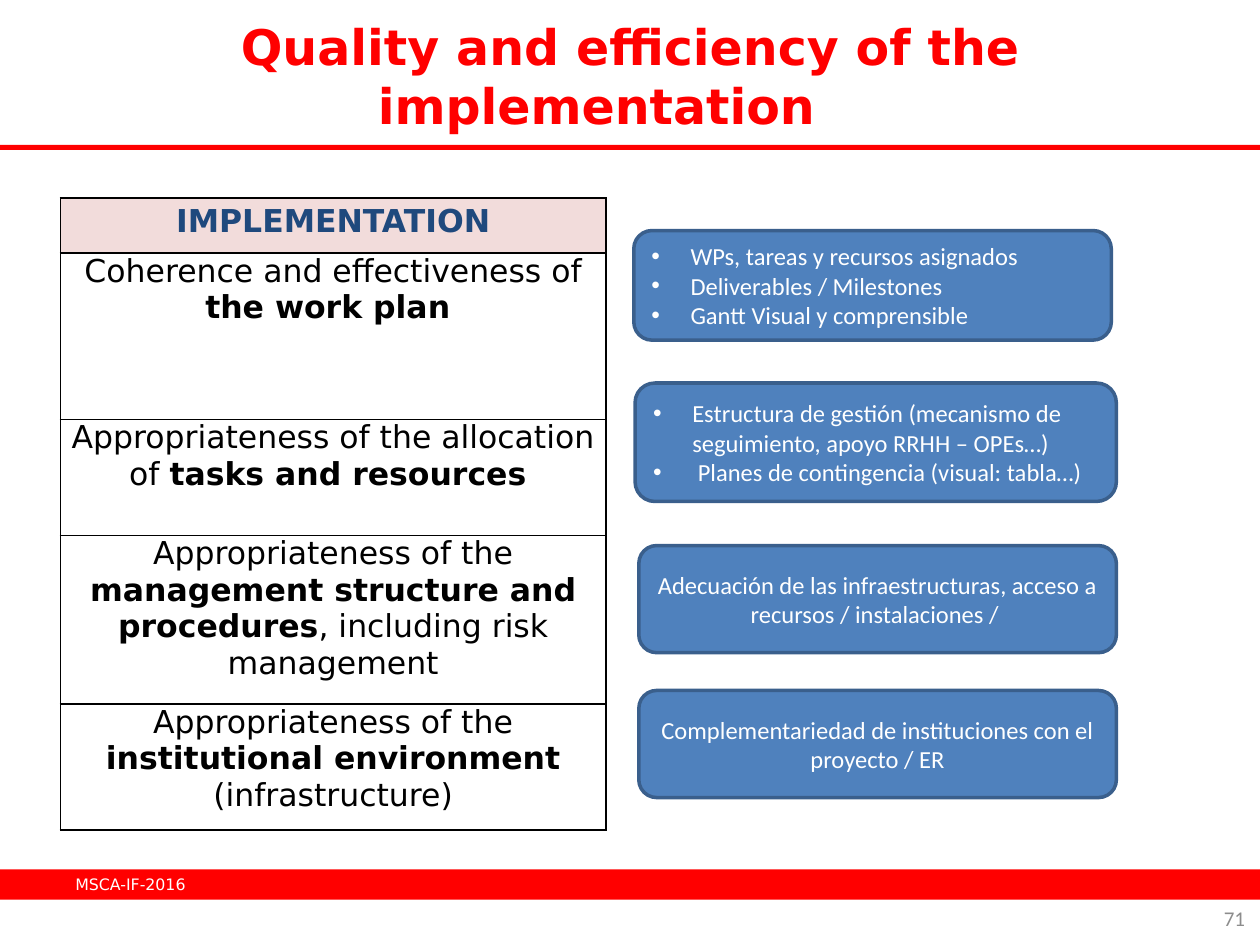
from lxml.etree import SubElement
from pptx import Presentation
from pptx.dml.color import RGBColor
from pptx.enum.shapes import MSO_SHAPE
from pptx.enum.text import MSO_ANCHOR, PP_ALIGN
from pptx.oxml.ns import qn
from pptx.util import Inches, Pt

WIDE, HIGH = 10, 7.5
THEME = {
    "red": "FF0000", "blue": "4F81BD", "edge": "3A5F8C", "pink": "F2DCDB",
    "title": {"name": "DejaVu Sans", "size": 28, "color": "FF0000", "bold": True},
    "head": {"name": "DejaVu Sans", "size": 18, "color": "1F497D", "bold": True},
    "plain": {"name": "DejaVu Sans", "size": 18, "color": "000000", "bold": False},
    "strong": {"name": "DejaVu Sans", "size": 18, "color": "000000", "bold": True},
    "box": {"name": "Calibri", "size": 14, "color": "FFFFFF", "bold": False},
    "foot": {"name": "DejaVu Sans", "size": 9, "color": "FFFFFF", "bold": False},
    "page": {"name": "Calibri", "size": 12, "color": "8C8C8C", "bold": False},
}

BARS = [(0, 6.9, WIDE, 0.24), (0, 1.15, WIDE, 0.04)]

# Row height, then runs of (style, text)
GRID = (0.48, 1.57, 4.33)
ROWS = [
    (0.44, [("head", "IMPLEMENTATION")]),
    (1.32, [("plain", "Coherence and effectiveness of "), ("strong", "the work plan ")]),
    (0.92, [("plain", "Appropriateness of the allocation of "),
            ("strong", "tasks and resources ")]),
    (1.34, [("plain", "Appropriateness of the "),
            ("strong", "management structure and procedures"),
            ("plain", ", including risk management")]),
    (1.00, [("plain", "Appropriateness of the "),
            ("strong", "institutional environment "), ("plain", "(infrastructure)")]),
]

# Place, then lines; several lines make a bullet list
NOTES = [
    ((5.03, 1.83, 3.79, 0.87), ["WPs, tareas y recursos asignados",
                                "Deliverables / Milestones",
                                "Gantt Visual y comprensible"]),
    ((5.04, 3.04, 3.82, 0.94),
     ["Estructura de gestión (mecanismo de seguimiento, apoyo RRHH – OPEs…)",
      " Planes de contingencia (visual: tabla…)"]),
    ((5.07, 4.33, 3.79, 0.85),
     ["Adecuación de las infraestructuras, acceso a recursos / instalaciones / "]),
    ((5.07, 5.48, 3.79, 0.85),
     ["Complementariedad de instituciones con el proyecto / ER"]),
]

LABELS = [
    ((7.65, 7.09, 2.33, 0.4), "page", PP_ALIGN.RIGHT, "71"),
    ((0.5, 0.13, 9, 0.94), "title", PP_ALIGN.CENTER,
     "Quality and efficiency of the implementation \t"),
    ((0.5, 6.82, 2.33, 0.4), "foot", PP_ALIGN.LEFT, "MSCA-IF-2016"),
]


def rgb(code):
    return RGBColor.from_string(code)


def inch(place):
    return [Inches(v) for v in place]


def write(para, style, text):
    run = para.add_run()
    run.text = text
    look = dict(THEME[style])
    run.font.color.rgb = rgb(look.pop("color"))
    look["size"] = Pt(look["size"])
    for key, value in look.items():
        setattr(run.font, key, value)


def block(slide, kind, place, fill, edge=None):
    shape = slide.shapes.add_shape(kind, *inch(place))
    shape.shadow.inherit = False
    shape.fill.solid()
    shape.fill.fore_color.rgb = rgb(fill)
    if edge:
        shape.line.color.rgb = rgb(edge)
        shape.line.width = Pt(2)
    else:
        shape.line.fill.background()
    return shape


def bullet(para):
    props = para._p.get_or_add_pPr()
    props.set("marL", str(Inches(0.31)))
    props.set("indent", str(-Inches(0.31)))
    SubElement(props, qn("a:buFont"), typeface="Arial")
    SubElement(props, qn("a:buChar"), char="•")


def border(cell):
    """Draw a thin black line on all four sides, placed before the fill."""
    props = cell._tc.get_or_add_tcPr()
    for spot, side in enumerate(("lnL", "lnR", "lnT", "lnB")):
        line = SubElement(props, qn("a:" + side), w=str(Pt(1)))
        fill = SubElement(line, qn("a:solidFill"))
        SubElement(fill, qn("a:srgbClr"), val="000000")
        props.insert(spot, line)


def matrix(slide):
    left, top, width = GRID
    high = sum(row[0] for row in ROWS)
    table = slide.shapes.add_table(len(ROWS), 1, *inch((left, top, width, high))).table
    table.first_row = table.horz_banding = False
    inset = {"margin_left": Inches(0.05), "margin_right": Inches(0.05),
             "margin_top": 0, "margin_bottom": 0}
    for i, (tall, runs) in enumerate(ROWS):
        table.rows[i].height = Inches(tall)
        cell = table.cell(i, 0)
        for key, value in inset.items():
            setattr(cell, key, value)
        para = cell.text_frame.paragraphs[0]
        para.alignment = PP_ALIGN.CENTER
        for style, text in runs:
            write(para, style, text)
        if i == 0:
            para.line_spacing = 1.15
            cell.fill.solid()
            cell.fill.fore_color.rgb = rgb(THEME["pink"])
        else:
            cell.fill.background()
        border(cell)


def note(slide, place, lines):
    shape = block(slide, MSO_SHAPE.ROUNDED_RECTANGLE, place, THEME["blue"], THEME["edge"])
    frame = shape.text_frame
    frame.word_wrap = True
    frame.vertical_anchor = MSO_ANCHOR.MIDDLE
    many = len(lines) > 1
    for i, text in enumerate(lines):
        para = frame.add_paragraph() if i else frame.paragraphs[0]
        para.alignment = PP_ALIGN.LEFT if many else PP_ALIGN.CENTER
        if many:
            bullet(para)
        write(para, "box", text)


def label(slide, place, style, align, text):
    frame = slide.shapes.add_textbox(*inch(place)).text_frame
    frame.word_wrap = True
    frame.vertical_anchor = MSO_ANCHOR.MIDDLE
    frame.paragraphs[0].alignment = align
    write(frame.paragraphs[0], style, text)


def main():
    deck = Presentation()
    deck.slide_width, deck.slide_height = inch((WIDE, HIGH))
    slide = deck.slides.add_slide(deck.slide_layouts[6])
    for place in BARS:
        block(slide, MSO_SHAPE.RECTANGLE, place, THEME["red"])
    matrix(slide)
    for place, lines in NOTES:
        note(slide, place, lines)
    for item in LABELS:
        label(slide, *item)
    deck.save("out.pptx")


if __name__ == "__main__":
    main()
